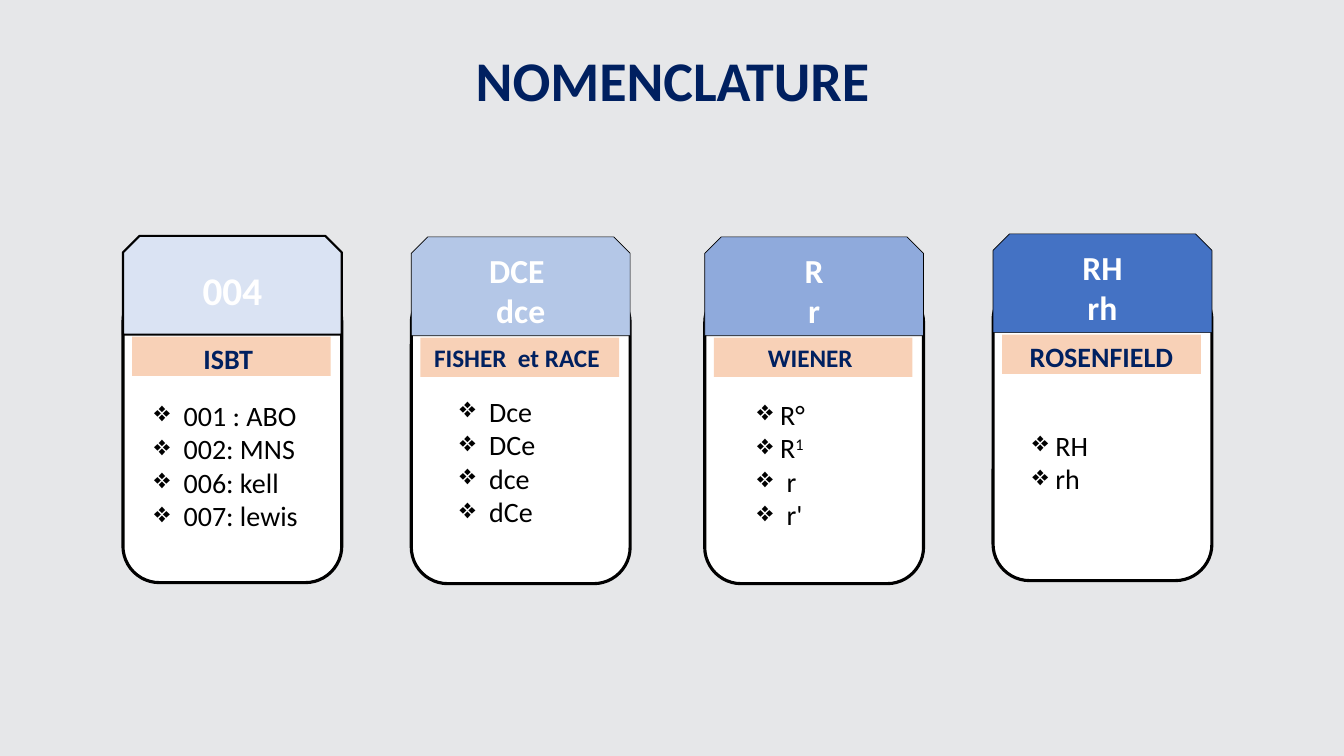
"""Build the NOMENCLATURE slide: four cards of blood group naming systems."""
from lxml.etree import SubElement
from pptx import Presentation
from pptx.dml.color import RGBColor
from pptx.enum.shapes import MSO_SHAPE
from pptx.enum.text import MSO_ANCHOR, PP_ALIGN
from pptx.oxml.ns import qn
from pptx.util import Inches, Pt

COLORS = {"bg": "E6E7E9", "navy": "002060", "black": "000000", "white": "FFFFFF", "label": "ED7D31",
          "isbt": "DAE3F3", "fisher": "B4C7E7", "wiener": "8FAADC", "rosenfield": "4472C4"}
CARD_W = 2.17

CARDS = [
    (1.22, 2.34, "isbt", 1.5, 28, ["004"], "ISBT ", 20, True,
     (1.43, 3.9, 1.81, 1.45), [" 001 : ABO", " 002: MNS", " 006: kell", " 007: lewis"]),
    (4.08, 2.35, "fisher", 0.5, 24, ["DCE ", "dce"], "FISHER  et RACE ", 18, True,
     (4.46, 3.86, 1.35, 1.45), [" Dce", " DCe", " dce", " dCe"]),
    (6.99, 2.35, "wiener", 0.5, 24, ["R", "r"], "WIENER ", 18, False,
     (7.41, 3.89, 1.35, 1.45), ["R°", "R^1", " r", " r'"]),
    (9.85, 2.32, "rosenfield", 0.5, 24, ["RH", "rh"], "ROSENFIELD", 20, True,
     (10.14, 4.2, 1.46, 0.77), ["RH", "rh"]),
]


def add_box(shapes, kind, box, fill, line=None):
    sp = shapes.add_shape(kind, *map(Inches, box))
    sp.shadow.inherit = False
    sp.fill.solid()
    sp.fill.fore_color.rgb = RGBColor.from_string(COLORS[fill])
    if line:
        sp.line.color.rgb = RGBColor.from_string(COLORS["black"])
        sp.line.width = Pt(line)
    else:
        sp.line.fill.background()
    return sp


def write(tf, lines, size, color, bold=True, align=PP_ALIGN.CENTER):
    for i, line in enumerate(lines):
        p = tf.paragraphs[0] if i == 0 else tf.add_paragraph()
        p.alignment = align
        base, _, superscript = line.partition("^")
        for text in filter(None, (base, superscript)):
            r = p.add_run()
            r.text = text
            r.font.name = "Calibri"
            r.font.size = Pt(size)
            r.font.bold = bold
            r.font.color.rgb = RGBColor.from_string(COLORS[color])
        if superscript:
            r.font._element.set("baseline", "30000")


prs = Presentation()
prs.slide_width, prs.slide_height = Inches(13.33), Inches(7.5)
s = prs.slides.add_slide(prs.slide_layouts[6])
s.background.fill.solid()
s.background.fill.fore_color.rgb = RGBColor.from_string(COLORS["bg"])

title = s.shapes.add_textbox(Inches(0.67), Inches(0.3), Inches(12), Inches(1.06))
tf = title.text_frame
tf.word_wrap = True
tf.vertical_anchor = MSO_ANCHOR.MIDDLE
write(tf, ["NOMENCLATURE"], 40, "navy")
tf.paragraphs[0].line_spacing = 0.9

for left, top, fill, line, size, header, label, label_size, wraps, list_box, items in CARDS:
    card = s.shapes.add_group_shape()
    add_box(card.shapes, MSO_SHAPE.ROUNDED_RECTANGLE, (left, top + 0.49, CARD_W, 2.95), "white", 2.25)
    sp = add_box(card.shapes, MSO_SHAPE.SNIP_2_SAME_RECTANGLE, (left, top, CARD_W, 0.98), fill, line)
    sp.text_frame.word_wrap = True
    sp.text_frame.vertical_anchor = MSO_ANCHOR.MIDDLE
    write(sp.text_frame, header, size, "white")

    sp = add_box(s.shapes, MSO_SHAPE.RECTANGLE, (left + 0.09, top + 1, 1.97, 0.39), "label")
    color = sp.fill._xPr.find(qn("a:solidFill"))[0]
    SubElement(color, qn("a:alpha")).set("val", "35000")
    tf = sp.text_frame
    tf.word_wrap = wraps
    tf.vertical_anchor = MSO_ANCHOR.TOP
    write(tf, [label], label_size, "navy")

    tf = s.shapes.add_textbox(*map(Inches, list_box)).text_frame
    tf.word_wrap = True
    write(tf, items, 20, "black", False, PP_ALIGN.LEFT)
    for p in tf.paragraphs:
        pPr = p._p.get_or_add_pPr()
        pPr.set("marL", str(Inches(0.23)))
        pPr.set("indent", str(Inches(-0.23)))
        SubElement(pPr, qn("a:buChar")).set("char", "❖")

prs.save("out.pptx")
